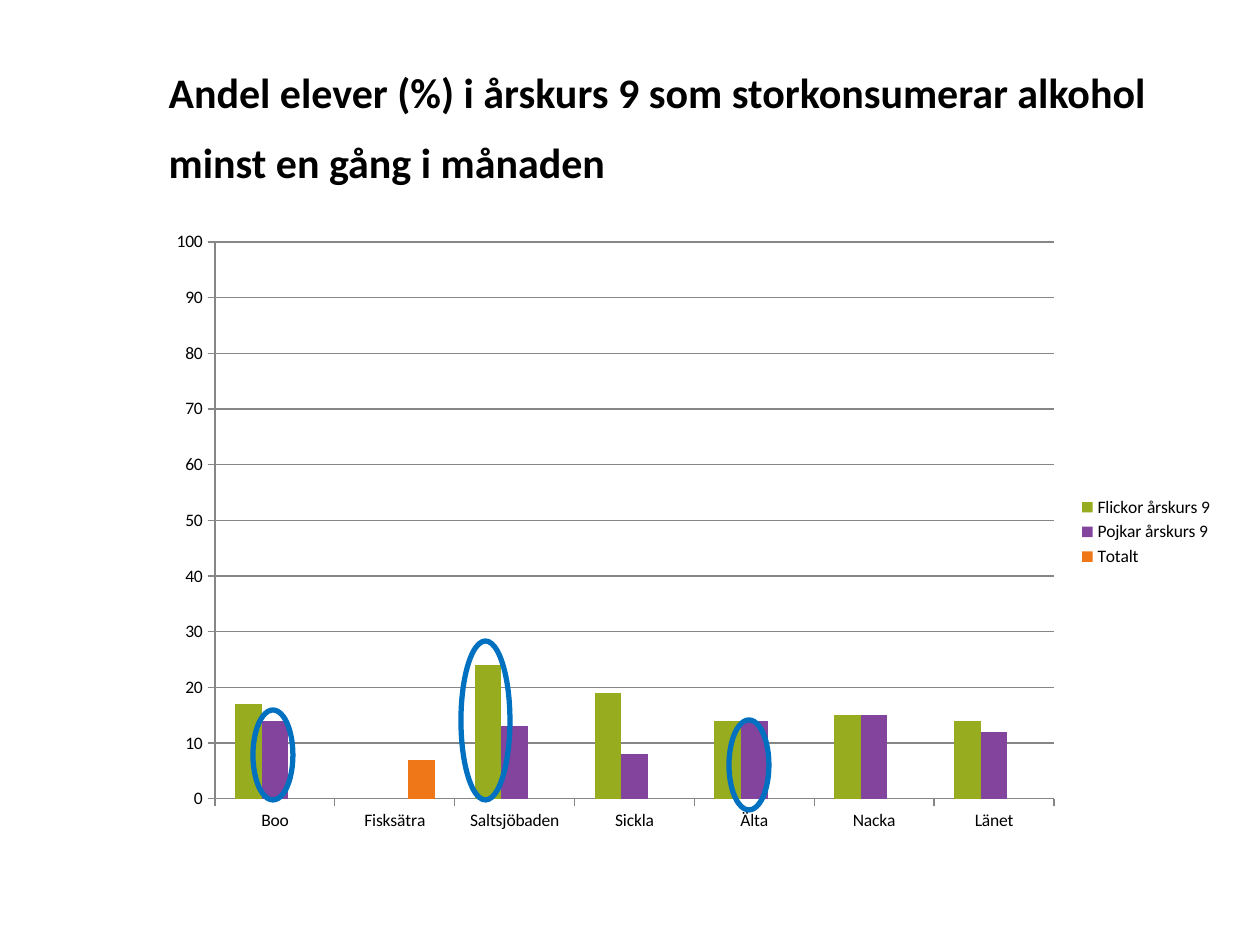
from lxml.etree import SubElement
from pptx import Presentation
from pptx.chart.data import CategoryChartData
from pptx.dml.color import RGBColor
from pptx.enum.chart import XL_CHART_TYPE, XL_LEGEND_POSITION, XL_TICK_MARK
from pptx.enum.shapes import MSO_SHAPE
from pptx.enum.text import MSO_ANCHOR, PP_ALIGN
from pptx.oxml.ns import qn
from pptx.util import Pt

PX = 914400 / 126
BLACK = RGBColor(0x00, 0x00, 0x00)
GREEN = RGBColor(0x97, 0xAC, 0x1E)
PURPLE = RGBColor(0x83, 0x44, 0x9D)
ORANGE = RGBColor(0xF0, 0x77, 0x17)
BLUE = RGBColor(0x00, 0x70, 0xC0)
GREY = RGBColor(0x86, 0x86, 0x86)
FONT = "Calibri"


def box(*sizes):
    return [round(size * PX) for size in sizes]


deck = Presentation()
deck.slide_width, deck.slide_height = box(1260, 945)
slide = deck.slides.add_slide(deck.slide_layouts[5])

# Title
title = slide.shapes.title
title.left, title.top, title.width, title.height = box(156, 38, 1070, 158)
frame = title.text_frame
frame.word_wrap = True
frame.vertical_anchor = MSO_ANCHOR.MIDDLE
para = frame.paragraphs[0]
para.alignment = PP_ALIGN.LEFT
para.line_spacing = Pt(40)
run = para.add_run()
run.text = "Andel elever (%) i årskurs 9 som storkonsumerar alkohol minst en gång i månaden"
run.font.name = FONT
run.font.size = Pt(24)
run.font.bold = True
run.font.color.rgb = BLACK

# Chart data: share of pupils by area
data = CategoryChartData()
data.categories = ["Boo", "Fisksätra", "Saltsjöbaden", "Sickla", "Älta", "Nacka", "Länet"]
data.add_series("Flickor årskurs 9", [17, None, 24, 19, 14, 15, 14])
data.add_series("Pojkar årskurs 9", [14, None, 13, 8, 14, 15, 12])
data.add_series("Totalt", [None, 7, None, None, None, None, None])
chart = slide.shapes.add_chart(
    XL_CHART_TYPE.COLUMN_CLUSTERED, *box(156, 220, 1070, 624), data).chart
chart.has_title = False
chart.font.name = FONT
chart.font.size = Pt(10)
chart.font.color.rgb = BLACK

# Columns
plot = chart.plots[0]
plot.gap_width = 150
plot.overlap = 0
plot.vary_by_categories = False
for series, color in zip(plot.series, (GREEN, PURPLE, ORANGE)):
    series.format.fill.solid()
    series.format.fill.fore_color.rgb = color

# Axes and grid
scale = chart.value_axis
scale.minimum_scale, scale.maximum_scale, scale.major_unit = 0, 100, 10
scale.has_major_gridlines = True
for axis in (scale, chart.category_axis):
    axis.major_tick_mark = XL_TICK_MARK.OUTSIDE
for part in (scale, chart.category_axis, scale.major_gridlines):
    part.format.line.color.rgb = GREY
    part.format.line.width = Pt(0.75)

# Legend
chart.has_legend = True
chart.legend.position = XL_LEGEND_POSITION.RIGHT
chart.legend.include_in_layout = False

# Fixed plot area, so that the rings meet the columns
area = plot._element.getparent()
layout = area.find(qn("c:layout"))
if layout is None:
    layout = SubElement(area, qn("c:layout"))
    area.insert(0, layout)
manual = SubElement(layout, qn("c:manualLayout"))
for tag, val in (("layoutTarget", "inner"), ("xMode", "edge"), ("yMode", "edge"),
                 ("x", 59 / 1070), ("y", 22 / 624), ("w", 839 / 1070), ("h", 557 / 624)):
    SubElement(manual, qn("c:" + tag)).set("val", str(val))

# Rings around notable columns
for ring in ((461, 641, 49, 159), (729, 720, 40, 90), (253, 710, 40, 90)):
    oval = slide.shapes.add_shape(MSO_SHAPE.OVAL, *box(*ring))
    oval.shadow.inherit = False
    oval.fill.background()
    oval.line.color.rgb = BLUE
    oval.line.width = Pt(3)

deck.save("out.pptx")
